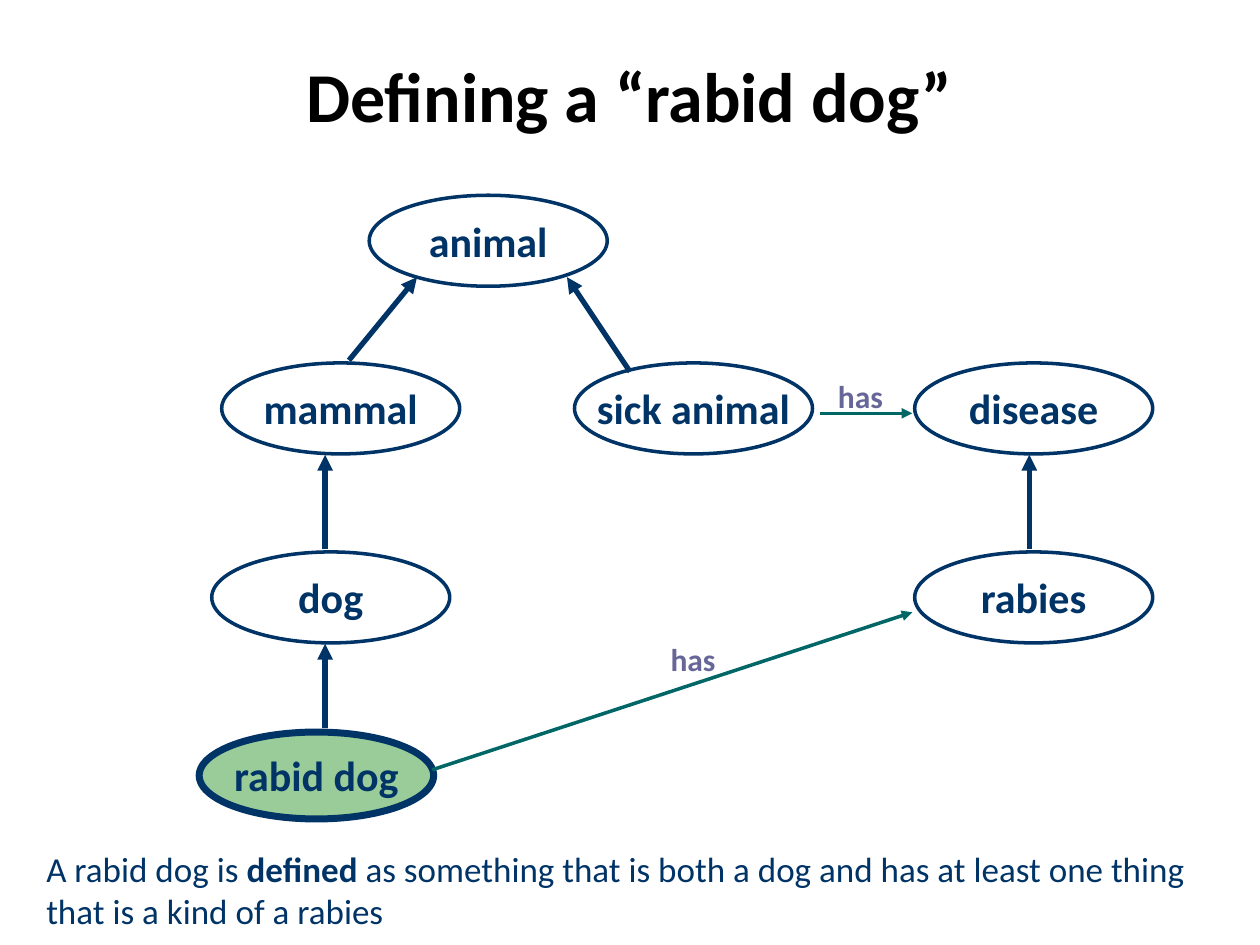
from typing import NamedTuple

from lxml.etree import SubElement
from pptx import Presentation
from pptx.dml.color import RGBColor
from pptx.enum.shapes import MSO_CONNECTOR as CONN, MSO_SHAPE as SHAPE
from pptx.enum.text import MSO_ANCHOR as ANCHOR, PP_ALIGN as ALIGN
from pptx.oxml.ns import qn
from pptx.util import Pt

BLACK = RGBColor(0x00, 0x00, 0x00)
WHITE = RGBColor(0xFF, 0xFF, 0xFF)
NAVY = RGBColor(0x00, 0x33, 0x66)
TEAL = RGBColor(0x00, 0x66, 0x66)
PURPLE = RGBColor(0x66, 0x66, 0x99)
GREEN = RGBColor(0x99, 0xCC, 0x99)
FONT = "Calibri"
LABEL_H = 36.6


class Node(NamedTuple):
    text: str
    x: float
    y: float
    label_w: float
    w: float = 136
    h: float = 52
    fill: RGBColor = WHITE
    line_w: float = 2


class Arrow(NamedTuple):
    x1: float
    y1: float
    x2: float
    y2: float
    color: RGBColor = NAVY
    width: float = 3


class Label(NamedTuple):
    text: str
    x: float
    y: float


ROW_1, ROW_2, ROW_3, ROW_4 = 111.6, 207.4, 315.4, 418.3
NODES = [
    Node("animal", 211, ROW_1, 96.5),
    Node("mammal", 126.7, ROW_2, 129.6),
    Node("dog", 121, ROW_3, 96.5),
    Node("sick animal", 328.3, ROW_2, 147.6),
    Node("rabies", 522.7, ROW_3, 96.5),
    Node("disease", 522.7, ROW_2, 105.8),
    Node("rabid dog", 113.8, ROW_4, 128.2, 134, 49.7, GREEN, 4),
]
ARROWS = [
    # "is a kind of"
    Arrow(199.4, 205.9, 238.3, 158.4),
    Arrow(360, 212.4, 324, 158.4),
    Arrow(185.8, 313.9, 185.8, 259.9),
    Arrow(588.2, 313.9, 588.2, 259.9),
    Arrow(185.8, 416.2, 185.8, 367.9),
    # "has"
    Arrow(468.7, 236.2, 521.3, 236.2, TEAL, 2),
    Arrow(247, 439.9, 521.3, 349.9, TEAL, 2),
]
LABELS = [Label("has", 461.5, 211.7), Label("has", 365.8, 362.2)]


def add_text(shapes, text: str, x: float, y: float, w: float, h: float,
             size: float, color: RGBColor, bold: bool = True,
             align: ALIGN = ALIGN.CENTER):
    tf = shapes.add_textbox(Pt(x), Pt(y), Pt(w), Pt(h)).text_frame
    tf.word_wrap = True
    tf.text = text
    p = tf.paragraphs[0]
    p.alignment = align
    style_run(p.runs[0], size, color, bold)
    return tf


def style_run(r, size: float, color: RGBColor, bold: bool) -> None:
    r.font.name, r.font.size, r.font.bold = FONT, Pt(size), bold
    r.font.color.rgb = color


def add_node(s, n: Node) -> None:
    group = s.shapes.add_group_shape()
    sp = group.shapes.add_shape(SHAPE.OVAL, Pt(n.x), Pt(n.y), Pt(n.w), Pt(n.h))
    sp.shadow.inherit = False
    sp.fill.solid()
    sp.fill.fore_color.rgb = n.fill
    sp.line.color.rgb = NAVY
    sp.line.width = Pt(n.line_w)
    add_text(group.shapes, n.text, n.x + (n.w - n.label_w) / 2,
             n.y + (n.h - LABEL_H) / 2, n.label_w, LABEL_H, 24, NAVY)


def add_arrow(s, a: Arrow) -> None:
    c = s.shapes.add_connector(CONN.STRAIGHT, Pt(a.x1), Pt(a.y1), Pt(a.x2), Pt(a.y2))
    c.line.color.rgb = a.color
    c.line.width = Pt(a.width)
    SubElement(c.line._get_or_add_ln(), qn("a:tailEnd"), type="triangle")
    SubElement(c._element.spPr, qn("a:effectLst"))


def main() -> None:
    prs = Presentation()
    prs.slide_width, prs.slide_height = Pt(720), Pt(540)
    s = prs.slides.add_slide(prs.slide_layouts[6])

    # Title
    tf = add_text(s.shapes, "Defining a “rabid dog”", 25.2, 20.2, 668.9, 61.9, 40, BLACK)
    tf.vertical_anchor = ANCHOR.BOTTOM
    tf.paragraphs[0].line_spacing = 0.9

    # Concept graph
    for node in NODES:
        add_node(s, node)
    for arrow in ARROWS:
        add_arrow(s, arrow)
    for label in LABELS:
        add_text(s.shapes, label.text, label.x, label.y, 60.5, 29.5, 18, PURPLE)

    # Definition
    tf = add_text(s.shapes, "A rabid dog is ", 19.4, 481, 674.6, 55.4, 20, NAVY,
                  bold=False, align=ALIGN.LEFT)
    for text, bold in [
        ("defined", True),
        (" as something that is both a dog and has at least one thing"
         " that is a kind of a rabies", False),
    ]:
        r = tf.paragraphs[0].add_run()
        r.text = text
        style_run(r, 20, NAVY, bold)

    prs.save("out.pptx")


if __name__ == "__main__":
    main()
